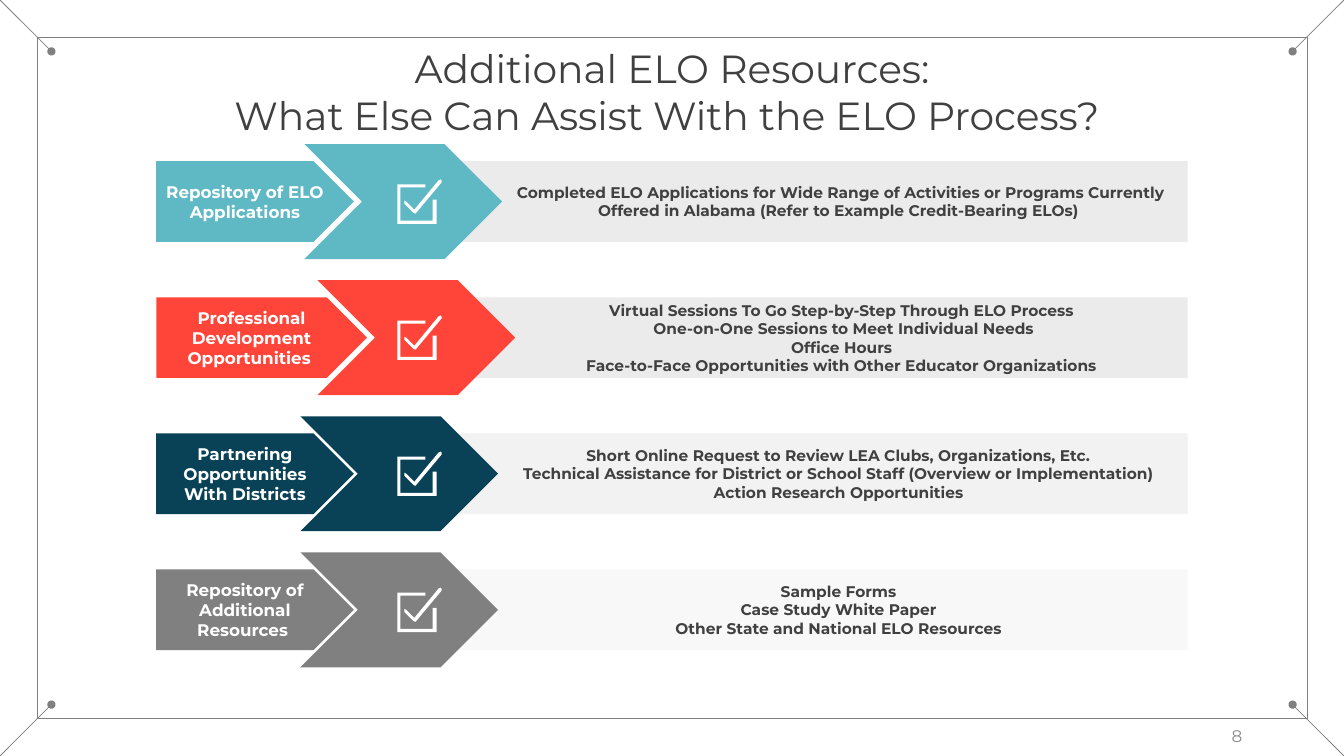
from dataclasses import dataclass

from lxml import etree
from pptx import Presentation
from pptx.dml.color import RGBColor
from pptx.enum.shapes import MSO_CONNECTOR, MSO_SHAPE
from pptx.enum.text import MSO_ANCHOR, MSO_AUTO_SIZE, PP_ALIGN
from pptx.oxml.ns import qn
from pptx.util import Pt

RECT, PLATE, CHEVRON = MSO_SHAPE.RECTANGLE, MSO_SHAPE.PENTAGON, MSO_SHAPE.CHEVRON
STRAIGHT = MSO_CONNECTOR.STRAIGHT
TOP, MIDDLE = MSO_ANCHOR.TOP, MSO_ANCHOR.MIDDLE
CENTER, RIGHT = PP_ALIGN.CENTER, PP_ALIGN.RIGHT
NO_FIT = MSO_AUTO_SIZE.NONE

PX = 9144
SLIDE_W, SLIDE_H = 1333, 750


@dataclass(frozen=True)
class Theme:
    font: str = "Montserrat"
    ink: str = "404040"
    line: str = "808080"
    number: str = "8C8C8C"
    white: str = "FFFFFF"
    title_size: int = 28
    label_size: int = 12
    body_size: int = 11
    number_size: int = 12


@dataclass(frozen=True)
class Row:
    label: str
    lines: tuple
    color: str
    band: str
    alpha: int = 100
    plate_w: int = 196
    chevron_x: int = 143
    text_x: int = 351
    text_w: int = 656


THEME = Theme()
TITLE = ("Additional ELO Resources:", "What Else Can Assist With the ELO Process? ")
ROWS = (
    Row("Repository of ELO Applications",
        ("Completed ELO Applications for Wide Range of Activities or Programs Currently "
         "Offered in Alabama (Refer to Example Credit-Bearing ELOs) ",),
        "5FB9C5", "D9D9D9", alpha=50, chevron_x=147),
    Row("Professional Development Opportunities ",
        ("Virtual Sessions To Go Step-by-Step Through ELO Process ",
         "One-on-One Sessions to Meet Individual Needs",
         "Office Hours ",
         "Face-to-Face Opportunities with Other Educator Organizations "),
        "FF453A", "D9D9D9", alpha=50, plate_w=209, chevron_x=160, text_x=340, text_w=684),
    Row("Partnering Opportunities With Districts",
        ("Short Online Request to Review LEA Clubs, Organizations, Etc. ",
         "Technical Assistance for District or School Staff (Overview or Implementation) ",
         "Action Research Opportunities "),
        "094156", "F2F2F2"),
    Row("Repository of Additional Resources ",
        ("Sample Forms ", "Case Study White Paper ",
         "Other State and National ELO Resources "),
        "808080", "F2F2F2", alpha=50),
)
BOX_POINTS = ((0, 0), (28, 0), (28, 3), (3, 3), (3, 36), (35, 36),
              (35, 15), (39, 15), (39, 39), (0, 39))
TICK_POINTS = ((43, -5), (41, -4), (17, 25), (9, 17), (7, 16), (7, 19),
               (16, 28), (18, 29), (19, 28), (44, -2), (44, -4))


def emu(*lengths):
    return [n * PX for n in lengths]


def paint(sp, color, alpha=100):
    sp.shadow.inherit = False
    sp.fill.solid()
    sp.fill.fore_color.rgb = RGBColor.from_string(color)
    sp.line.fill.background()
    if alpha < 100:
        clr = sp.fill._xPr.find(qn("a:solidFill"))[0]
        etree.SubElement(clr, qn("a:alpha"), val=str(alpha * 1000))


def write(sp, lines, size, color, bold=False, align=CENTER, anchor=MIDDLE, inset=None):
    tf = sp.text_frame
    frame = {"word_wrap": True, "auto_size": NO_FIT, "vertical_anchor": anchor}
    if inset is not None:
        frame.update({f"margin_{side}": inset for side in ("left", "top", "right", "bottom")})
    for name, value in frame.items():
        setattr(tf, name, value)
    for i, line in enumerate(lines):
        p = tf.add_paragraph() if i else tf.paragraphs[0]
        p.alignment = align
        p.line_spacing = 1.0
        p.space_before = Pt(0)
        r = p.add_run()
        r.text = line
        for name, value in {"name": THEME.font, "size": Pt(size), "bold": bold}.items():
            setattr(r.font, name, value)
        r.font.color.rgb = RGBColor.from_string(color)


def add_title(s, x, y, w, h):
    sp = s.shapes.title
    sp.left, sp.top, sp.width, sp.height = emu(x, y, w, h)
    write(sp, TITLE, THEME.title_size, THEME.ink, anchor=TOP, inset=0)


def add_frame(s, x, y, w, h):
    sp = s.shapes.add_shape(RECT, *emu(x, y, w, h))
    sp.shadow.inherit = False
    sp.fill.background()
    sp.line.color.rgb = RGBColor.from_string(THEME.line)
    sp.line.width = Pt(1)


def add_icon(shapes, x, y):
    for points in (BOX_POINTS, TICK_POINTS):
        outline = [(x + dx, y + dy) for dx, dy in points]
        builder = shapes.build_freeform(*outline[0], scale=PX)
        builder.add_line_segments(outline[1:], close=True)
        paint(builder.convert_to_shape(), THEME.white)


def add_row(s, row, x, y, w, h):
    shapes = s.shapes.add_group_shape().shapes
    band_x = 286
    band = shapes.add_shape(RECT, *emu(x + band_x, y, w - band_x, h))
    paint(band, row.band, row.alpha)
    plate = shapes.add_shape(PLATE, *emu(x, y, row.plate_w, h))
    paint(plate, row.color)
    write(plate, [row.label], THEME.label_size, THEME.white, bold=True)
    chevron = shapes.add_shape(CHEVRON, *emu(x + row.chevron_x, y - 17, 196, h + 34))
    paint(chevron, row.color)
    body = shapes.add_textbox(*emu(x + row.text_x, y, row.text_w, h))
    write(body, row.lines, THEME.body_size, THEME.ink, bold=True, inset=0)
    add_icon(shapes, x + 239, y + 23)


def add_corners(s, w, h, reach):
    for x, dx in ((w, -reach), (0, reach)):
        for y, dy in ((h, -reach), (0, reach)):
            line = s.shapes.add_connector(STRAIGHT, *emu(x, y, x + dx, y + dy))
            line.line.color.rgb = RGBColor.from_string(THEME.line)
            line.line.width = Pt(0.5)
            etree.SubElement(line.line._get_or_add_ln(), qn("a:tailEnd"), type="oval")
            etree.SubElement(line._element.spPr, qn("a:effectLst"))


def add_number(s, x, y, w, h):
    sp = s.shapes.add_textbox(*emu(x, y, w, h))
    write(sp, ["8"], THEME.number_size, THEME.number, align=RIGHT)


def main():
    prs = Presentation()
    prs.slide_width, prs.slide_height = emu(SLIDE_W, SLIDE_H)
    s = prs.slides.add_slide(prs.slide_layouts[5])
    add_frame(s, 37, 37, 1260, 676)
    add_title(s, 0, 44, SLIDE_W, 94)
    for i, row in enumerate(ROWS):
        add_row(s, row, 155, 160 + i * 135, 1023, 80)
    add_corners(s, SLIDE_W, SLIDE_H, 51)
    add_number(s, 942, 710, 300, 40)
    prs.save("out.pptx")


if __name__ == "__main__":
    main()
